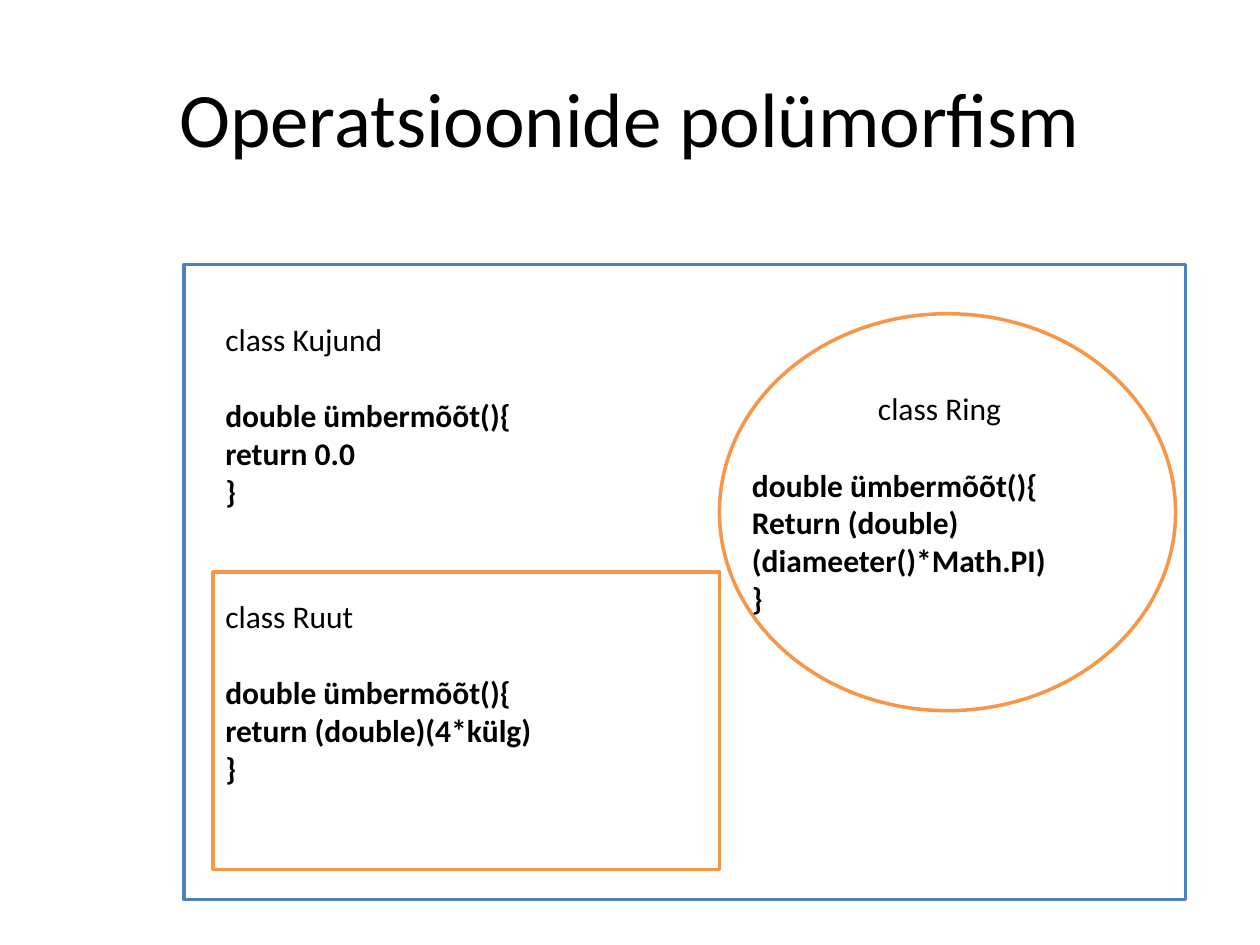
"""Build a slide on operation polymorphism with three class outlines."""
import pptx
import pptx.dml.color
import pptx.enum.shapes
import pptx.enum.text
import pptx.util

COLOURS = {"text": "000000", "paper": "FFFFFF", "base": "4F81BD", "derived": "F79646"}
FONT = "Calibri"
CODE_SIZE = 18
BLANK_LINE = 22
WIDTH, HEIGHT = 10, 7.5
KINDS = pptx.enum.shapes.MSO_SHAPE


def colour(name):
    return pptx.dml.color.RGBColor.from_string(COLOURS[name])


def format_runs(para, size, bold=False):
    for span in para.runs:
        span.font.name = FONT
        span.font.size = pptx.util.Pt(size)
        span.font.bold = bold
        span.font.color.rgb = colour("text")


deck = pptx.Presentation()
deck.slide_width = pptx.util.Inches(WIDTH)
deck.slide_height = pptx.util.Inches(HEIGHT)
page = deck.slides.add_slide(deck.slide_layouts[5])

title = page.shapes.title
title.left, title.top = int(deck.slide_width * 0.05), int(deck.slide_height * 0.04)
title.width, title.height = int(deck.slide_width * 0.9), pptx.util.Inches(1.25)
title.text_frame.text = "Operatsioonide polümorfism"
title.text_frame.vertical_anchor = pptx.enum.text.MSO_ANCHOR.MIDDLE
title.text_frame.paragraphs[0].alignment = pptx.enum.text.PP_ALIGN.CENTER
format_runs(title.text_frame.paragraphs[0], 44)

classes = [
    (KINDS.RECTANGLE, "base", (1.46, 2.1, 7.95, 5.04), (1.69, 2.49, 3.94, 1.62), 0,
     ["class Kujund", "double ümbermõõt(){", "return 0.0", "}"]),
    (KINDS.RECTANGLE, "derived", (1.69, 4.54, 4.02, 2.36), (1.69, 4.69, 3.23, 1.62), 0,
     ["class Ruut", "double ümbermõõt(){", "return (double)(4*külg)", "}"]),
    (KINDS.OVAL, "derived", (5.71, 2.49, 3.62, 3.15), (5.87, 3.04, 3.46, 1.92), 1,
     ["class Ring", "double ümbermõõt(){", "Return (double)(diameeter()*Math.PI)", "}"]),
]

for kind, role, outline_place, code_place, heading_indent, lines in classes:
    outline = page.shapes.add_shape(kind, *map(pptx.util.Inches, outline_place))
    outline.shadow.inherit = False
    outline.fill.solid()
    outline.fill.fore_color.rgb = colour("paper")
    outline.line.color.rgb = colour(role)
    outline.line.width = pptx.util.Pt(2)

    box = page.shapes.add_textbox(*map(pptx.util.Inches, code_place))
    frame = box.text_frame
    frame.word_wrap = True
    frame.auto_size = pptx.enum.text.MSO_AUTO_SIZE.SHAPE_TO_FIT_TEXT
    frame.text = "\n".join(lines)
    for number, para in enumerate(frame.paragraphs):
        format_runs(para, CODE_SIZE, bold=number > 0)
    heading = frame.paragraphs[0]
    heading.space_after = pptx.util.Pt(BLANK_LINE)
    if heading_indent:
        heading._p.get_or_add_pPr().set("marL", str(pptx.util.Inches(heading_indent)))

deck.save("out.pptx")
